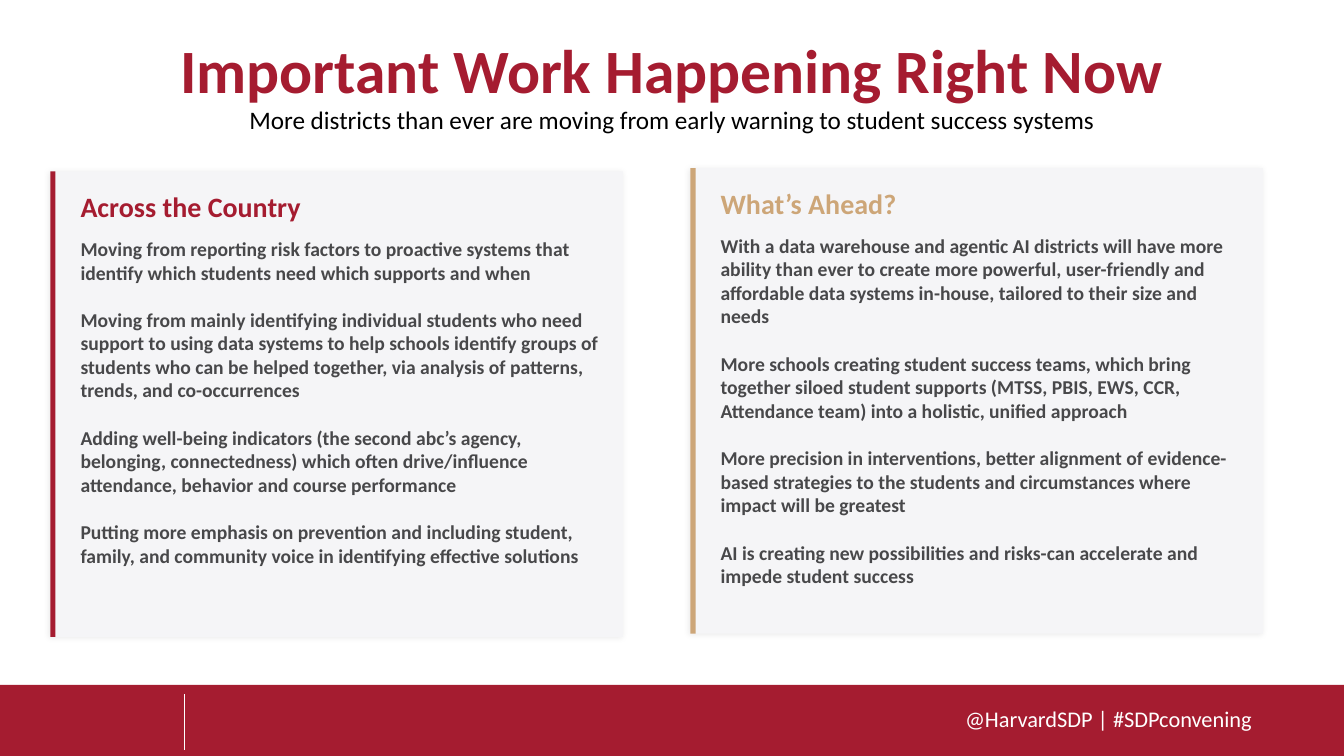
from dataclasses import dataclass

from lxml.etree import SubElement
from pptx import Presentation
from pptx.dml.color import RGBColor
from pptx.enum.shapes import MSO_CONNECTOR, MSO_SHAPE
from pptx.enum.text import MSO_ANCHOR, PP_ALIGN
from pptx.oxml.ns import qn
from pptx.util import Cm, Pt


@dataclass(frozen=True)
class Theme:
    """Colours, font and type sizes of the slide."""
    crimson: str = "A51C30"
    gold: str = "CDA678"
    panel: str = "F5F5F7"
    body: str = "48484A"
    black: str = "000000"
    white: str = "FFFFFF"
    font: str = "Calibri"
    title_size: int = 44
    heading_size: int = 20
    subtitle_size: int = 18
    footer_size: int = 16
    body_size: int = 14
    body_gap: int = 17


THEME = Theme()
WIDTH, HEIGHT = 33.87, 19.05

COUNTRY = [
    "Moving from reporting risk factors to proactive systems that identify which students need which supports and when",
    "Moving from mainly identifying individual students who need support to using data systems to help schools "
    "identify groups of students who can be helped together, via analysis of patterns, trends, and co-occurrences",
    "Adding well-being indicators (the second abc’s agency, belonging, connectedness) which often drive/influence "
    "attendance, behavior and course performance",
    "Putting more emphasis on prevention and including student, family, and community voice in identifying "
    "effective solutions",
]
AHEAD = [
    "With a data warehouse and agentic AI districts will have more ability than ever to create more powerful, "
    "user-friendly and affordable data systems in-house, tailored to their size and needs",
    "More schools creating student success teams, which bring together siloed student supports (MTSS, PBIS, EWS, "
    "CCR, Attendance team) into a holistic, unified approach",
    "More precision in interventions, better alignment of evidence-based strategies to the students and "
    "circumstances where impact will be greatest",
    "AI is creating new possibilities and risks-can accelerate and impede student success",
]


def add_rect(s, x, y, w, h, color):
    """Add a plain filled rectangle without outline or shadow."""
    sp = s.shapes.add_shape(MSO_SHAPE.RECTANGLE, Cm(x), Cm(y), Cm(w), Cm(h))
    sp.fill.solid()
    sp.fill.fore_color.rgb = RGBColor.from_string(color)
    sp.line.fill.background()
    sp.shadow.inherit = False
    return sp


def add_soft_shadow(sp):
    """Give a shape a faint outer shadow."""
    effects = sp._element.spPr.find(qn("a:effectLst"))
    shadow = SubElement(effects, qn("a:outerShdw"), blurRad=str(Pt(4)), dist=str(Pt(1)),
                        dir="8100000", algn="bl", rotWithShape="0")
    color = SubElement(shadow, qn("a:srgbClr"), val=THEME.black)
    SubElement(color, qn("a:alpha"), val="8000")


def add_text(s, x, y, w, h, texts, size, color, bold=False, align=PP_ALIGN.LEFT,
             anchor=MSO_ANCHOR.TOP, margins=(0, 0, 0, 0), spacing=1.0, gap=0):
    """Add a text box with one paragraph for each text."""
    tf = s.shapes.add_textbox(Cm(x), Cm(y), Cm(w), Cm(h)).text_frame
    tf.word_wrap = True
    tf.vertical_anchor = anchor
    tf.margin_left, tf.margin_top, tf.margin_right, tf.margin_bottom = map(Cm, margins)
    for i, text in enumerate(texts):
        p = tf.add_paragraph() if i else tf.paragraphs[0]
        p.add_run().text = text
        p.alignment = align
        p.line_spacing = spacing
        p.space_before = Pt(gap if i else 0)
        p.font.name = THEME.font
        p.font.size = Pt(size)
        p.font.bold = bold
        p.font.color.rgb = RGBColor.from_string(color)


def add_header(s, x, y, w):
    """Place the title and the subtitle under it."""
    margins = (0.25, 0.13, 0.25, 0.13)
    add_text(s, x, y, w, 2.31, ["Important Work Happening Right Now"], THEME.title_size, THEME.crimson,
             bold=True, align=PP_ALIGN.CENTER, anchor=MSO_ANCHOR.MIDDLE, margins=margins, spacing=0.9)
    add_text(s, x, y + 1.88, w, 1.65,
             ["More districts than ever are moving from early warning to student success systems"],
             THEME.subtitle_size, THEME.black, align=PP_ALIGN.CENTER, margins=margins, spacing=0.9)


def add_panel(s, x, y, w, h, accent, heading, texts):
    """Place a shadowed card with an accent bar, a heading and its points."""
    add_soft_shadow(add_rect(s, x, y, w, h, THEME.panel))
    add_rect(s, x, y, 0.13, h, accent)
    add_text(s, x + 0.76, y + 0.38, w - 2.84, 1.02, [heading], THEME.heading_size, accent,
             bold=True, anchor=MSO_ANCHOR.MIDDLE)
    add_text(s, x + 0.76, y + 1.65, w - 1.27, h - 1.95, texts, THEME.body_size, THEME.body,
             bold=True, gap=THEME.body_gap)


def add_footer(s, x, y, w, h):
    """Place the footer band with its divider and handle."""
    add_rect(s, x, y, w, h, THEME.crimson)
    add_text(s, x + 21.31, y + 0.38, 10.24, 0.94, ["@HarvardSDP | #SDPconvening"], THEME.footer_size,
             THEME.white, align=PP_ALIGN.RIGHT, margins=(0.25, 0.13, 0, 0.13))
    divider = s.shapes.add_connector(MSO_CONNECTOR.STRAIGHT, Cm(x + 4.65), Cm(y + 0.24),
                                     Cm(x + 4.65), Cm(y + 1.63))
    divider.line.color.rgb = RGBColor.from_string(THEME.white)
    divider.line.width = Pt(0.5)
    SubElement(divider._element.spPr, qn("a:effectLst"))


def main():
    """Build and save the slide."""
    prs = Presentation()
    prs.slide_width, prs.slide_height = Cm(WIDTH), Cm(HEIGHT)
    s = prs.slides.add_slide(prs.slide_layouts[6])
    add_footer(s, 0, 17.26, WIDTH, HEIGHT - 17.26)
    add_header(s, 0, 0.71, WIDTH)
    add_panel(s, 1.27, 4.32, 14.43, 11.73, THEME.crimson, "Across the Country", COUNTRY)
    add_panel(s, 17.4, 4.24, 14.43, 11.73, THEME.gold, "What’s Ahead?", AHEAD)
    prs.save("out.pptx")


if __name__ == "__main__":
    main()
